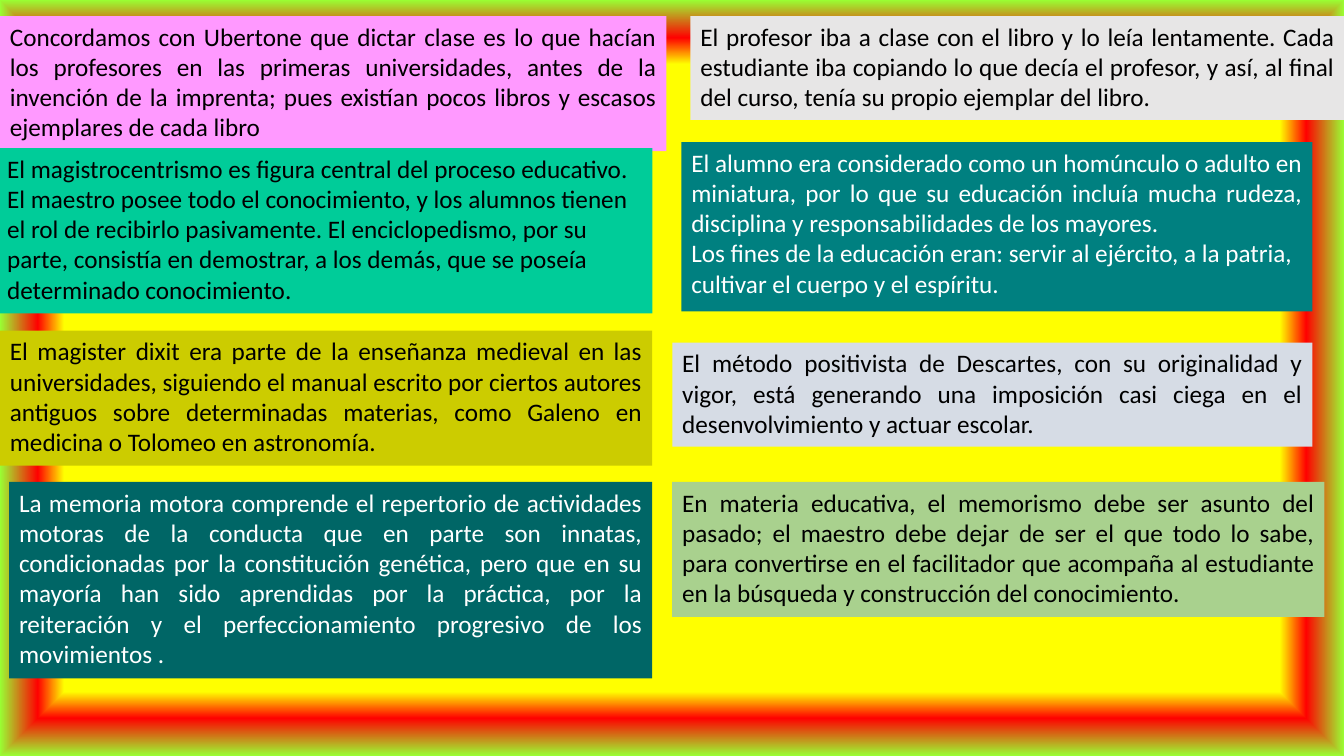
from dataclasses import dataclass

from lxml.etree import SubElement
from pptx import Presentation
from pptx.dml.color import RGBColor
from pptx.enum.text import MSO_AUTO_SIZE, PP_ALIGN
from pptx.oxml.ns import qn
from pptx.slide import Slide
from pptx.util import Pt

BLACK = "000000"
WHITE = "FFFFFF"
BACKGROUND_STOPS = [(83, "FFFF00"), (90, "FF0000"), (100, "99FF33"), (100, "66FF33")]


@dataclass
class Note:
    left: float
    top: float
    width: float
    height: float
    fill: str
    text: str
    color: str = BLACK
    justified: int = 1  # how many leading paragraphs are justified


NOTES = [
    Note(0, 11.5, 476, 96.5, "FF99FF",
         "Concordamos con Ubertone que dictar clase es lo que hacían los profesores en las "
         "primeras universidades, antes de la invención de la imprenta; pues existían pocos "
         "libros y escasos ejemplares de cada libro"),
    Note(493.2, 11.5, 467.2, 74.2, "E7E6E6",
         "El profesor iba a clase con el libro y lo leía lentamente. Cada estudiante iba "
         "copiando lo que decía el profesor, y así, al final del curso, tenía su propio "
         "ejemplar del libro."),
    Note(-2, 105.8, 468, 118, "00CC99",
         "El magistrocentrismo es figura central del proceso educativo. El maestro posee todo "
         "el conocimiento, y los alumnos tienen el rol de recibirlo pasivamente. El "
         "enciclopedismo, por su parte, consistía en demostrar, a los demás, que se poseía "
         "determinado conocimiento.", justified=0),
    Note(486.7, 101.5, 450.7, 121, "008080",
         "El alumno era considerado como un homúnculo o adulto en miniatura, por lo que su "
         "educación incluía mucha rudeza, disciplina y responsabilidades de los mayores.\n"
         "Los fines de la educación eran: servir al ejército, a la patria, cultivar el cuerpo "
         "y el espíritu.", WHITE),
    Note(0, 236.2, 465.8, 96.5, "CCCC00",
         "El magister dixit era parte de la enseñanza medieval en las universidades, siguiendo "
         "el manual escrito por ciertos autores antiguos sobre determinadas materias, como "
         "Galeno en medicina o Tolomeo en astronomía."),
    Note(480.2, 244.8, 457.2, 74.2, "D6DCE5",
         "El método positivista de Descartes, con su originalidad y vigor, está generando una "
         "imposición casi ciega en el desenvolvimiento y actuar escolar."),
    Note(6.5, 344.2, 459.4, 140.4, "006666",
         "La memoria motora comprende el repertorio de actividades motoras de la conducta que "
         "en parte son innatas, condicionadas por la constitución genética, pero que en su "
         "mayoría han sido aprendidas por la práctica, por la reiteración y el "
         "perfeccionamiento progresivo de los movimientos .", WHITE),
    Note(480.2, 344.2, 465.8, 96.5, "A9D18E",
         "En materia educativa, el memorismo debe ser asunto del pasado; el maestro debe dejar "
         "de ser el que todo lo sabe, para convertirse en el facilitador que acompaña al "
         "estudiante en la búsqueda y construcción del conocimiento."),
]


def rgb(value: str) -> RGBColor:
    return RGBColor.from_string(value)


def paint_background(page: Slide) -> None:
    """Fill the page with a rectangular gradient that spreads from its centre."""
    page.background.fill.gradient()
    gradient = next(page.element.iter(qn("a:gradFill")))
    for child in list(gradient):
        gradient.remove(child)
    stops = SubElement(gradient, qn("a:gsLst"))
    for percent, color in BACKGROUND_STOPS:
        stop = SubElement(stops, qn("a:gs"), pos=str(percent * 1000))
        SubElement(stop, qn("a:srgbClr"), val=color)
    shade = SubElement(gradient, qn("a:path"), {"path": "rect"})
    SubElement(shade, qn("a:fillToRect"), dict.fromkeys("ltrb", "50000"))


def add_note(page: Slide, note: Note) -> None:
    box = page.shapes.add_textbox(Pt(note.left), Pt(note.top), Pt(note.width), Pt(note.height))
    box.fill.solid()
    box.fill.fore_color.rgb = rgb(note.fill)
    frame = box.text_frame
    frame.word_wrap = True
    frame.auto_size = MSO_AUTO_SIZE.SHAPE_TO_FIT_TEXT
    frame.text = note.text
    for index, para in enumerate(frame.paragraphs):
        para.alignment = PP_ALIGN.JUSTIFY if index < note.justified else PP_ALIGN.LEFT
        para.line_spacing = Pt(21.6)
        for span in para.runs:
            span.font.name = "Calibri"
            span.font.size = Pt(18)
            span.font.color.rgb = rgb(note.color)


def main() -> None:
    deck = Presentation()
    deck.slide_width, deck.slide_height = Pt(960), Pt(540)
    page = deck.slides.add_slide(deck.slide_layouts[6])
    paint_background(page)
    for note in NOTES:
        add_note(page, note)
    deck.save("out.pptx")


if __name__ == "__main__":
    main()
